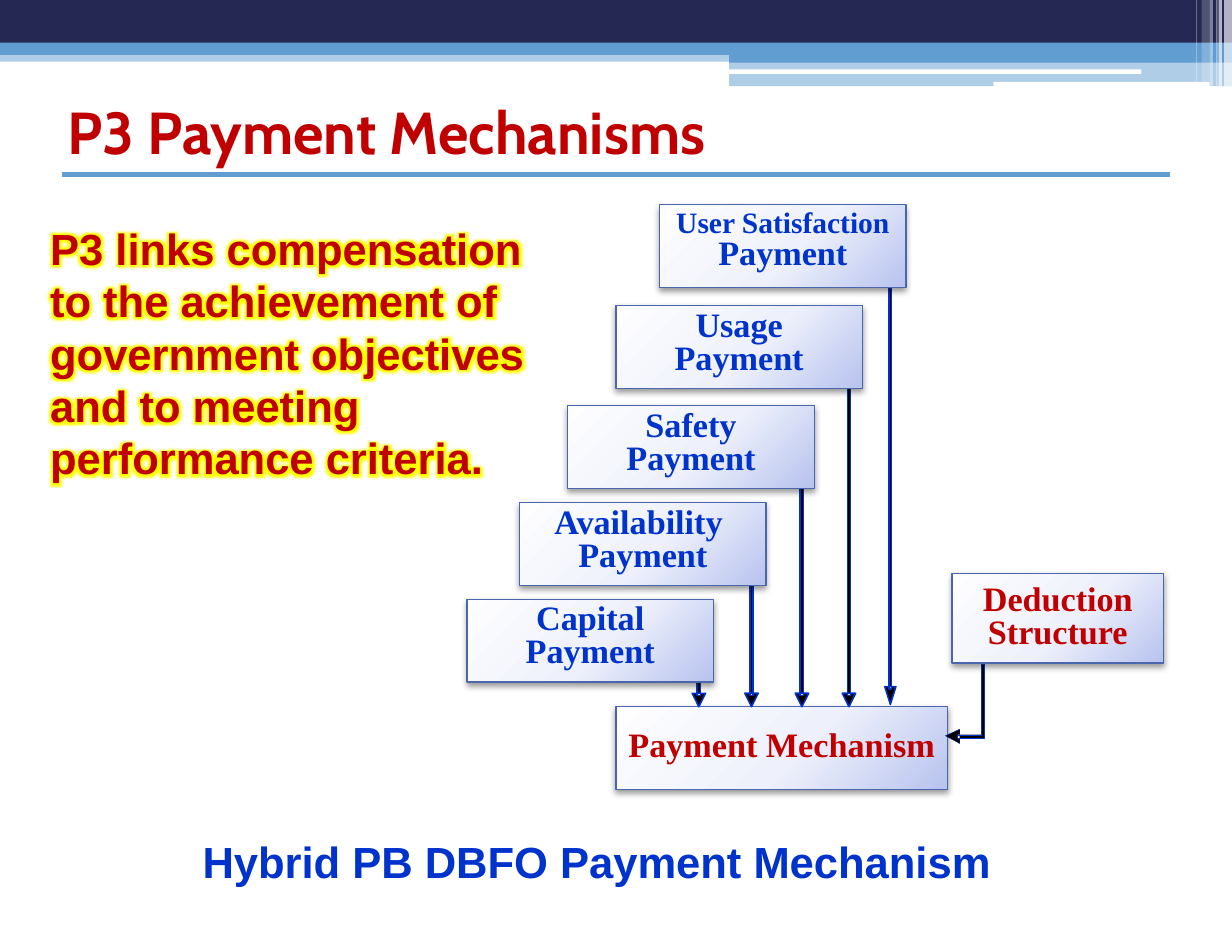
from lxml.etree import SubElement
from pptx import Presentation
from pptx.dml.color import RGBColor
from pptx.enum.shapes import MSO_CONNECTOR as Connector, MSO_SHAPE as Shape
from pptx.enum.text import MSO_ANCHOR as Anchor, MSO_AUTO_SIZE as AutoSize, PP_ALIGN as Align
from pptx.oxml import parse_xml
from pptx.oxml.ns import nsdecls, qn
from pptx.util import Inches, Pt

NAVY, SKY, WHITE, BLACK = "242852", "629DD1", "FFFFFF", "000000"
RED, BLUE, EDGE = "C00000", "0033CC", "4A66AC"
SERIF = "Times New Roman"
GRADIENT = f"""<a:gradFill {nsdecls('a')} rotWithShape="1"><a:gsLst>
<a:gs pos="0"><a:srgbClr val="FEFEFF"/></a:gs>
<a:gs pos="55000"><a:srgbClr val="EEF1FB"/></a:gs>
<a:gs pos="100000"><a:srgbClr val="B8C3EF"/></a:gs></a:gsLst>
<a:path path="circle"><a:fillToRect l="-40000" t="-90000" r="140000" b="190000"/></a:path>
</a:gradFill>"""
SHADOW = f"""<a:outerShdw {nsdecls('a')} blurRad="52070" dist="25400" dir="5400000"
rotWithShape="0"><a:srgbClr val="000000"><a:alpha val="40000"/></a:srgbClr></a:outerShdw>"""
GLOW = f"""<a:effectLst {nsdecls('a')}><a:glow rad="101600">
<a:srgbClr val="FFFF00"/></a:glow></a:effectLst>"""


def color(value):
    return RGBColor.from_string(value)


def inches(*values):
    return [Inches(value) for value in values]


class SlideBuilder:
    """Holds the shared style and the slide being drawn."""

    def __init__(self, page):
        self.page = page
        self.shapes = page.shapes

    def paint(self, shape, fill, line=None, width=1, opacity=100):
        shape.shadow.inherit = False
        shape.fill.solid()
        shape.fill.fore_color.rgb = color(fill)
        if opacity < 100:
            tint = shape._element.spPr.find(qn("a:solidFill"))[0]
            SubElement(tint, qn("a:alpha")).set("val", str(opacity * 1000))
        if line:
            shape.line.color.rgb = color(line)
            shape.line.width = Pt(width)
        else:
            shape.line.fill.background()

    def add_lines(self, frame, lines, font, ink, align=Align.LEFT, spacing=None):
        """Fill a frame with (text, size) lines, one paragraph each."""
        for index, (text, size) in enumerate(lines):
            para = frame.add_paragraph() if index else frame.paragraphs[0]
            para.alignment, para.line_spacing = align, spacing
            span = para.add_run()
            span.text = text
            span.font.color.rgb = color(ink)
            for name, value in {"name": font, "size": Pt(size), "bold": True}.items():
                setattr(span.font, name, value)

    def band(self, left, top, width, height, fill, opacity=100, kind=Shape.RECTANGLE):
        band = self.shapes.add_shape(kind, *inches(left, top, width, height))
        self.paint(band, fill, opacity=opacity)

    def title(self, text, place):
        title = self.shapes.title
        title.left, title.top, title.width, title.height = inches(*place)
        title.text_frame.vertical_anchor = Anchor.MIDDLE
        self.add_lines(title.text_frame, [(text, 38)], "Cabin", RED)

    def rule(self, left, right, top, ink, width):
        rule = self.shapes.add_connector(Connector.STRAIGHT, *inches(left, top, right, top))
        rule.line.color.rgb = color(ink)
        rule.line.width = Pt(width)
        SubElement(rule._element.spPr, qn("a:effectLst"))

    def text(self, place, text, ink, wrap=True, glow=False):
        box = self.shapes.add_textbox(*inches(*place))
        frame = box.text_frame
        settings = {"word_wrap": wrap, "vertical_anchor": Anchor.MIDDLE,
                    "auto_size": AutoSize.SHAPE_TO_FIT_TEXT}
        for name, value in settings.items():
            setattr(frame, name, value)
        self.add_lines(frame, [(text, 28)], "Arial", ink)
        if glow:
            style = frame.paragraphs[0].runs[0]._r.get_or_add_rPr()
            style.find(qn("a:solidFill")).addnext(parse_xml(GLOW))

    def card(self, place, lines, ink, anchor=Anchor.TOP):
        card = self.shapes.add_shape(Shape.RECTANGLE, *inches(*place))
        self.paint(card, WHITE, EDGE, 0.75)
        properties = card._element.spPr
        properties.replace(properties.find(qn("a:solidFill")), parse_xml(GRADIENT))
        properties.find(qn("a:effectLst")).append(parse_xml(SHADOW))
        card.text_frame.word_wrap = True
        card.text_frame.vertical_anchor = anchor
        self.add_lines(card.text_frame, lines, SERIF, ink, Align.CENTER, 0.8)

    def outline(self, contours, line_width):
        first, *others = [[inches(*point) for point in contour] for contour in contours]
        builder = self.shapes.build_freeform(*first[0])
        builder.add_line_segments(first[1:], close=True)
        for contour in others:
            builder.move_to(*contour[0])
            builder.add_line_segments(contour[1:], close=True)
        self.paint(builder.convert_to_shape(), BLACK, BLUE, line_width)

    def down_arrow(self, center, top, tip=6.31, half=0.06, head=0.12, stem=0.015):
        neck = tip - head
        end = neck + 0.02
        shaft = [(center + stem, top), (center + stem, end),
                 (center - stem, end), (center - stem, top)]
        point = [(center + half, neck), (center, tip), (center - half, neck)]
        self.outline([shaft, point], 1)


def main():
    deck = Presentation()
    deck.slide_width, deck.slide_height = inches(11, 8.5)
    slide = SlideBuilder(deck.slides.add_slide(deck.slide_layouts[5]))

    # Header bands
    slide.band(0, 0.45, 11, 0.1, SKY, 50)
    slide.band(0, 0, 11, 0.39, NAVY)
    slide.band(0, 0.38, 11, 0.11, SKY)
    slide.band(6.51, 0.45, 4.49, 0.11, SKY)
    slide.band(6.51, 0.55, 4.49, 0.22, SKY, 50)
    slide.band(6.5, 0.62, 3.69, 0.04, WHITE, kind=Shape.ROUNDED_RECTANGLE)
    slide.band(8.87, 0.73, 1.93, 0.05, WHITE, kind=Shape.ROUNDED_RECTANGLE)

    # Translucent stripes in the corner
    for left, width, height, opacity in [
            (10.93, 0.07, 0.77, 65), (10.88, 0.03, 0.77, 65), (10.86, 0.01, 0.77, 60),
            (10.8, 0.03, 0.77, 40), (10.73, 0.07, 0.73, 20), (10.68, 0.01, 0.73, 30)]:
        slide.band(left, 0, width, height, WHITE, opacity)

    # Title and caption
    slide.rule(0.55, 10.45, 1.56, SKY, 3)
    slide.title("P3 Payment Mechanisms", (0.5, 0.5, 10.08, 1.33))
    slide.text((1.71, 7.4, 7.65, 0.57), "Hybrid PB DBFO Payment Mechanism", BLUE, wrap=False)

    # Payment mechanism, with the elbow arrow from the deductions
    slide.card((5.5, 6.31, 2.96, 0.74), [("Payment Mechanism", 22)], RED, Anchor.MIDDLE)
    slide.outline([
        [(8.79, 5.93), (8.79, 6.59), (8.55, 6.59), (8.55, 6.56), (8.76, 6.56), (8.76, 5.93)],
        [(8.57, 6.64), (8.44, 6.57), (8.57, 6.51)]], 0.13)
    slide.card((8.5, 5.12, 1.89, 0.8), [("Deduction Structure", 22)], RED, Anchor.MIDDLE)

    # Staircase of payments, each with an arrow down to the mechanism
    slim = {"tip": 6.29, "half": 0.05, "head": 0.16, "stem": 0.01}
    payments = [
        (5.89, 1.83, 7.95, [("User Satisfaction", 19), ("Payment", 22)], slim),
        (5.5, 2.73, 7.58, [("Usage", 22), ("Payment", 22)], {}),
        (5.07, 3.62, 7.16, [("Safety Payment", 22)], {}),
        (4.64, 4.49, 6.71, [("Availability ", 22), ("Payment", 22)], {}),
        (4.17, 5.35, 6.24, [("Capital", 22), ("Payment", 22)], {}),
    ]
    for left, top, center, lines, arrow in payments:
        slide.down_arrow(center, top + 0.74, **arrow)
        slide.card((left, top, 2.2, 0.74), lines, BLUE)

    # Key message
    slide.text((0.35, 1.92, 4.64, 2.46),
               "P3 links compensation to the achievement of government objectives "
               "and to meeting performance criteria.", RED, glow=True)

    deck.save("out.pptx")


if __name__ == "__main__":
    main()
